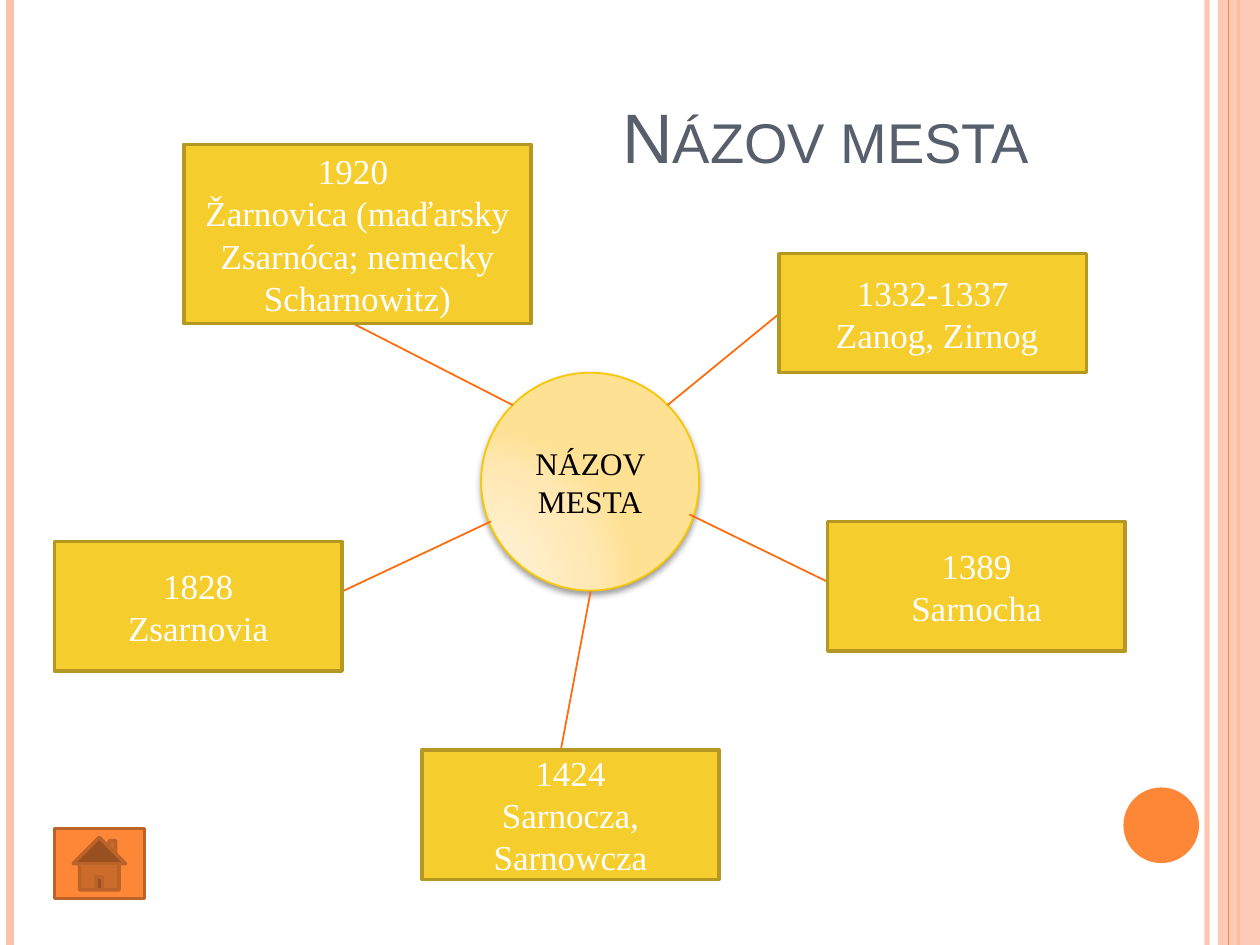
from dataclasses import dataclass

from lxml import etree
from pptx import Presentation
from pptx.dml.color import RGBColor
from pptx.enum import shapes, text
from pptx.oxml import ns
from pptx.util import Pt

PEACH = RGBColor(0xFE, 0xC3, 0xAE)
ORANGE = RGBColor(0xFE, 0x86, 0x37)
ORANGE_EDGE = RGBColor(0xBC, 0x63, 0x29)
SPOKE = RGBColor(0xFF, 0x6B, 0x0A)
YELLOW = RGBColor(0xF5, 0xCD, 0x2D)
YELLOW_EDGE = RGBColor(0xB5, 0x98, 0x21)
HUB_EDGE = RGBColor(0xF8, 0xC7, 0x00)
SLATE = RGBColor(0x57, 0x5F, 0x6D)
WHITE = RGBColor(0xFF, 0xFF, 0xFF)
BLACK = RGBColor(0, 0, 0)
HUB_STOPS = ((0, "FFF0D1"), (30, "FFEFCC"), (75, "FFE7B1"), (100, "FFE193"))
SERIF = "Times New Roman"
WIDTH, HEIGHT = 720, 540


@dataclass
class Stripe:
    x: float
    color: RGBColor
    weight: float
    opacity: int = 100


@dataclass
class Era:
    """A box with a year and the town's name, and its spoke from the hub."""
    lines: tuple[str, ...]
    frame: tuple[float, float, float, float]
    hub_point: tuple[float, float]
    box_point: tuple[float, float]


STRIPES = (
    Stripe(689.8, PEACH, 3, 93),
    Stripe(5.8, PEACH, 4.5),
    Stripe(707.8, ORANGE, 1.5),
)
EDGE_STRIPE = Stripe(702, ORANGE, 0.75)
ERAS = (
    Era(("1332-1337", " Zanog, Zirnog"), (445, 145, 176, 68),
        (381.5, 231.5), (445, 179.5)),
    Era(("1389", "Sarnocha"), (473, 298, 170, 74),
        (394, 294), (473, 332.5)),
    Era(("1424", "Sarnocza, Sarnowcza"), (241, 428.5, 170, 74),
        (337.5, 338), (320.5, 428.5)),
    Era(("1828", "Zsarnovia"), (31, 309.5, 164.5, 74),
        (280.5, 298), (195.5, 338)),
    Era(("1920 ", "Žarnovica (maďarsky Zsarnóca; nemecky Scharnowitz)"),
        (105, 82.5, 198.5, 102.5), (293, 231.5), (202, 185)),
)


def sub(parent, tag: str, **attributes):
    """Append a DrawingML element."""
    return etree.SubElement(parent, ns.qn("a:" + tag), attributes)


def set_opacity(owner, percent: int) -> None:
    color = next(owner.iter(ns.qn("a:srgbClr")))
    sub(color, "alpha", val=str(percent * 1000))


def add_line(page, start, end, color: RGBColor, weight: float):
    line = page.shapes.add_connector(
        shapes.MSO_CONNECTOR.STRAIGHT, *map(Pt, (*start, *end)))
    line.line.color.rgb = color
    line.line.width = Pt(weight)
    sub(line._element.spPr, "effectLst")
    return line


def add_stripe(page, stripe: Stripe) -> None:
    line = add_line(page, (stripe.x, 0), (stripe.x, HEIGHT),
                    stripe.color, stripe.weight)
    if stripe.opacity < 100:
        set_opacity(line._element.spPr, stripe.opacity)


def add_figure(page, kind, frame, fill: RGBColor, edge: RGBColor | None = None,
               weight: float = 2):
    figure = page.shapes.add_shape(kind, *map(Pt, frame))
    figure.shadow.inherit = False
    figure.fill.solid()
    figure.fill.fore_color.rgb = fill
    if edge is None:
        figure.line.fill.background()
    else:
        figure.line.color.rgb = edge
        figure.line.width = Pt(weight)
    return figure


def write(figure, lines, size: float, color: RGBColor) -> None:
    frame = figure.text_frame
    frame.word_wrap = True
    frame.vertical_anchor = text.MSO_ANCHOR.MIDDLE
    for index, line in enumerate(lines):
        para = frame.paragraphs[0] if index == 0 else frame.add_paragraph()
        para.alignment = text.PP_ALIGN.CENTER
        span = para.add_run()
        span.text = line
        span.font.name = SERIF
        span.font.size = Pt(size)
        span.font.color.rgb = color


def add_hub(page) -> None:
    hub = add_figure(page, shapes.MSO_SHAPE.OVAL, (275, 213, 124.5, 124.5),
                     WHITE, HUB_EDGE, 1)
    properties = hub._element.spPr
    gradient = etree.Element(ns.qn("a:gradFill"), rotWithShape="1")
    stops = sub(gradient, "gsLst")
    for position, color in HUB_STOPS:
        sub(sub(stops, "gs", pos=str(position * 1000)), "srgbClr", val=color)
    circle = sub(gradient, "path", path="circle")
    sub(circle, "fillToRect", l="5000", t="100000", r="120000", b="10000")
    properties.replace(properties.find(ns.qn("a:solidFill")), gradient)

    shadow = sub(properties.find(ns.qn("a:effectLst")), "outerShdw",
                 blurRad=str(Pt(4)), dist=str(Pt(2)), dir="5400000",
                 rotWithShape="0")
    sub(shadow, "srgbClr", val="000000")
    set_opacity(shadow, 40)
    write(hub, ("NÁZOV MESTA",), 18, BLACK)


def add_era(page, era: Era) -> None:
    add_line(page, era.hub_point, era.box_point, SPOKE, 1)
    box = add_figure(page, shapes.MSO_SHAPE.RECTANGLE, era.frame,
                     YELLOW, YELLOW_EDGE)
    write(box, era.lines, 20, WHITE)


def set_title(page) -> None:
    title = page.shapes.title
    title.left, title.top, title.width, title.height = map(
        Pt, (348.5, 15, 648, 90))
    title.text_frame.vertical_anchor = text.MSO_ANCHOR.BOTTOM
    para = title.text_frame.paragraphs[0]
    para.alignment = text.PP_ALIGN.LEFT
    span = para.add_run()
    span.text = "Názov mesta"
    span.font.name = "Arial"
    span.font.size = Pt(40)
    span.font.color.rgb = SLATE
    span.font._element.set("cap", "small")


def main() -> None:
    deck = Presentation()
    deck.slide_width, deck.slide_height = Pt(WIDTH), Pt(HEIGHT)
    page = deck.slides.add_slide(deck.slide_layouts[5])

    for stripe in STRIPES:
        add_stripe(page, stripe)
    band = add_figure(page, shapes.MSO_SHAPE.RECTANGLE,
                      (696, 0, 24, HEIGHT), PEACH)
    set_opacity(band._element.spPr, 87)
    add_stripe(page, EDGE_STRIPE)
    add_figure(page, shapes.MSO_SHAPE.OVAL, (642, 450, 43.2, 43.2), ORANGE)

    add_hub(page)
    for era in ERAS:
        add_era(page, era)
    set_title(page)
    add_figure(page, shapes.MSO_SHAPE.ACTION_BUTTON_HOME,
               (31, 473.5, 51.5, 40), ORANGE, ORANGE_EDGE)
    deck.save("out.pptx")


if __name__ == "__main__":
    main()
